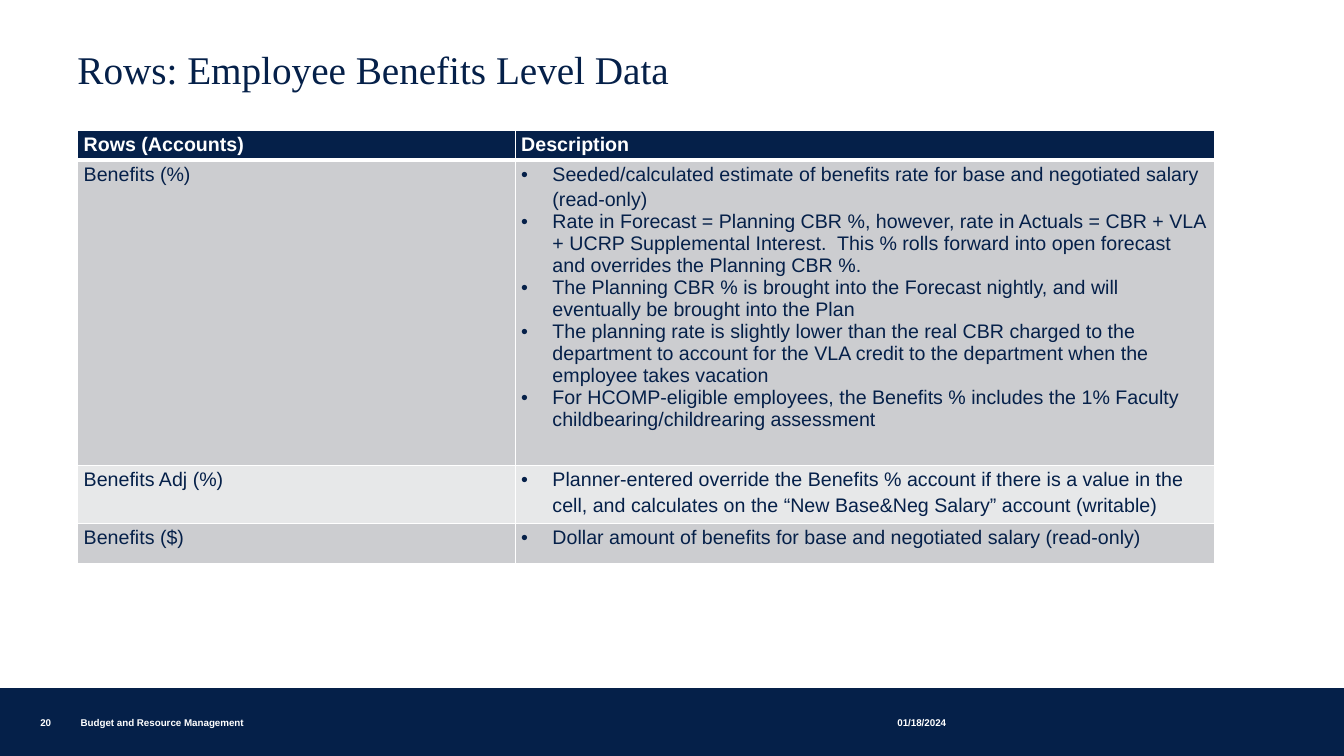
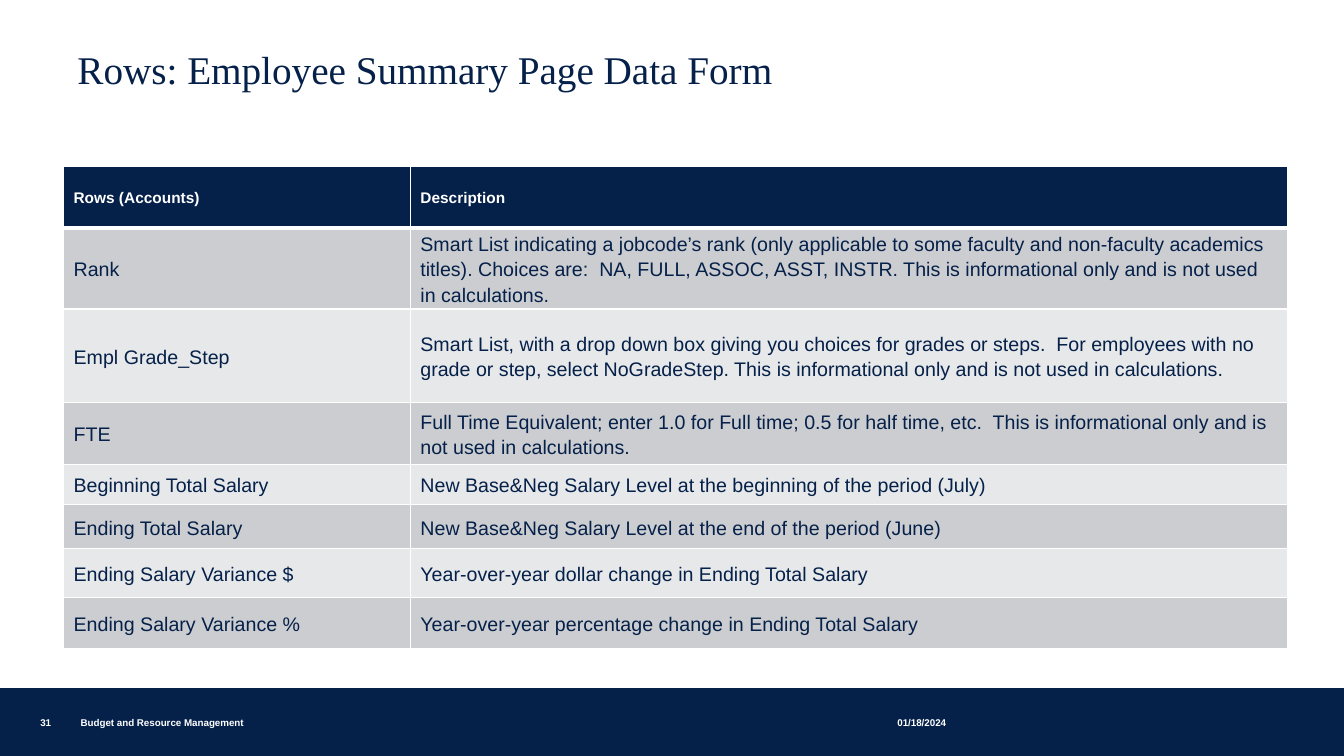
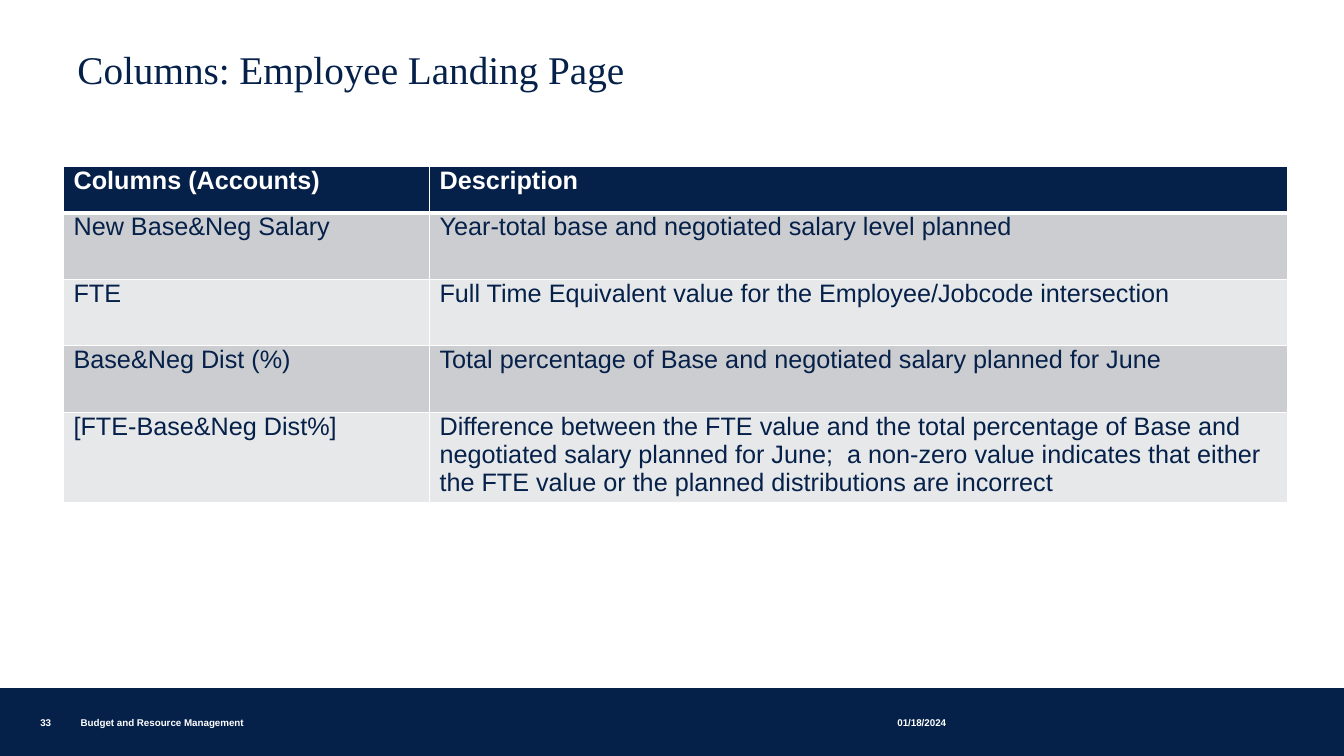
from dataclasses import dataclass

from lxml import etree
from pptx import Presentation
from pptx.dml.color import RGBColor
from pptx.enum.shapes import MSO_SHAPE
from pptx.enum.text import MSO_ANCHOR as Anchor
from pptx.oxml.ns import qn
from pptx.util import Inches, Pt

COLORS = {
    "navy": "052049",
    "white": "FFFFFF",
    "band_dark": "CCCDD0",
    "band_light": "E7E8E9",
}
BODY_FONT = "Arial"
TITLE_FONT = "Times New Roman"
DEPARTMENT = "Budget and Resource Management"
DATE = "01/18/2024"
BULLET_INDENT = Inches(0.31)


@dataclass(frozen=True)
class Row:
    height: float
    account: str
    description: str | tuple[str, ...]  # a tuple is a bulleted list


@dataclass(frozen=True)
class AccountTable:
    left: float
    top: float
    widths: tuple[float, float]
    rows: tuple[Row, ...]
    margin: float
    header_size: int
    body_size: int
    anchor: Anchor = Anchor.TOP
    spacing: float = 1.15
    description_after: int = 0


@dataclass(frozen=True)
class Page:
    number: int
    title: str
    accounts: AccountTable


@dataclass(frozen=True)
class FooterItem:
    left: float
    top: float
    width: float
    height: float
    text: str


# Content
PAGES = (
    Page(20, "Rows: Employee Benefits Level Data", AccountTable(
        left=0.77, top=1.29, widths=(4.34, 6.94), margin=0.06,
        header_size=14, body_size=14,
        rows=(
            Row(0.3, "Rows (Accounts)", "Description"),
            Row(3.03, "Benefits (%)", (
                "Seeded/calculated estimate of benefits rate for base and negotiated salary (read-only)",
                "Rate in Forecast = Planning CBR %, however, rate in Actuals = CBR + VLA + UCRP "
                "Supplemental Interest.  This % rolls forward into open forecast and overrides "
                "the Planning CBR %.",
                "The Planning CBR % is brought into the Forecast nightly, and will eventually be "
                "brought into the Plan",
                "The planning rate is slightly lower than the real CBR charged to the department "
                "to account for the VLA credit to the department when the employee takes vacation",
                "For HCOMP-eligible employees, the Benefits % includes the 1% Faculty "
                "childbearing/childrearing assessment",
            )),
            Row(0.57, "Benefits Adj (%)", (
                "Planner-entered override the Benefits % account if there is a value in the cell, "
                "and calculates on the “New Base&Neg Salary” account (writable)",
            )),
            Row(0.4, "Benefits ($)", (
                "Dollar amount of benefits for base and negotiated salary (read-only)",
            )),
        ),
    )),
    Page(31, "Rows: Employee Summary Page Data Form", AccountTable(
        left=0.63, top=1.65, widths=(3.44, 8.7), margin=0.1,
        header_size=11, body_size=14, anchor=Anchor.MIDDLE,
        rows=(
            Row(0.61, "Rows (Accounts)", "Description"),
            Row(0.77, "Rank",
                "Smart List indicating a jobcode’s rank (only applicable to some faculty and "
                "non-faculty academics titles). Choices are:  NA, FULL, ASSOC, ASST, INSTR. "
                "This is informational only and is not used in calculations."),
            Row(0.93, "Empl Grade_Step",
                "Smart List, with a drop down box giving you choices for grades or steps.  For "
                "employees with no grade or step, select NoGradeStep. This is informational only "
                "and is not used in calculations."),
            Row(0.61, "FTE",
                "Full Time Equivalent; enter 1.0 for Full time; 0.5 for half time, etc.  This is "
                "informational only and is not used in calculations."),
            Row(0.4, "Beginning Total Salary",
                "New Base&Neg Salary Level at the beginning of the period (July)"),
            Row(0.44, "Ending Total Salary",
                "New Base&Neg Salary Level at the end of the period (June)"),
            Row(0.48, "Ending Salary Variance $",
                "Year-over-year dollar change in Ending Total Salary"),
            Row(0.51, "Ending Salary Variance %",
                "Year-over-year percentage change in Ending Total Salary"),
        ),
    )),
    Page(33, "Columns: Employee Landing Page", AccountTable(
        left=0.63, top=1.65, widths=(3.63, 8.51), margin=0.1,
        header_size=18, body_size=18, spacing=1.0, description_after=10,
        rows=(
            Row(0.46, "Columns (Accounts)", "Description"),
            Row(0.66, "New Base&Neg Salary",
                "Year-total base and negotiated salary level planned"),
            Row(0.66, "FTE",
                "Full Time Equivalent value for the Employee/Jobcode intersection"),
            Row(0.66, "Base&Neg Dist (%)",
                "Total percentage of Base and negotiated salary planned for June"),
            Row(0.8, "[FTE-Base&Neg Dist%]",
                "Difference between the FTE value and the total percentage of Base and negotiated "
                "salary planned for June;  a non-zero value indicates that either the FTE value "
                "or the planned distributions are incorrect"),
        ),
    )),
)


def color(name: str) -> RGBColor:
    return RGBColor.from_string(COLORS[name])


def add_bullet(paragraph) -> None:
    properties = paragraph._p.get_or_add_pPr()
    properties.set("marL", str(BULLET_INDENT))
    properties.set("indent", str(-BULLET_INDENT))
    etree.SubElement(properties, qn("a:buFont"), typeface=BODY_FONT)
    etree.SubElement(properties, qn("a:buChar"), char="•")


def write_text(frame, text: str | tuple[str, ...], *, size: int, ink: str,
               font: str = BODY_FONT, bold: bool = False,
               spacing: float = 1.0, after: int = 0) -> None:
    """Fill a text frame; only the first paragraph takes the given line spacing."""
    bulleted = isinstance(text, tuple)
    for index, line in enumerate(text if bulleted else (text,)):
        paragraph = frame.add_paragraph() if index else frame.paragraphs[0]
        paragraph.line_spacing = 1.0 if index else spacing
        paragraph.space_after = Pt(after)
        if bulleted:
            add_bullet(paragraph)
        run = paragraph.add_run()
        run.text = line
        run.font.name = font
        run.font.size = Pt(size)
        run.font.bold = bold
        run.font.color.rgb = color(ink)


def add_text_box(slide, left: float, top: float, width: float, height: float,
                 text: str, *, margin: tuple[float, float] = (0, 0), **text_format) -> None:
    frame = slide.shapes.add_textbox(
        Inches(left), Inches(top), Inches(width), Inches(height)).text_frame
    frame.word_wrap = True
    frame.vertical_anchor = Anchor.BOTTOM
    frame.margin_left = frame.margin_right = Inches(margin[0])
    frame.margin_top = frame.margin_bottom = Inches(margin[1])
    write_text(frame, text, **text_format)


def set_borders(cell, **widths: float) -> None:
    """Draw white cell borders; the keys are the sides L, R, T and B in that order."""
    properties = cell._tc.get_or_add_tcPr()
    for position, (side, width) in enumerate(widths.items()):
        line = etree.Element(qn(f"a:ln{side}"), w=str(Pt(width)))
        fill = etree.SubElement(line, qn("a:solidFill"))
        etree.SubElement(fill, qn("a:srgbClr"), val=COLORS["white"])
        properties.insert(position, line)


def add_account_table(slide, accounts: AccountTable) -> None:
    rows = accounts.rows
    table = slide.shapes.add_table(
        len(rows), len(accounts.widths), Inches(accounts.left), Inches(accounts.top),
        Inches(sum(accounts.widths)), Inches(sum(row.height for row in rows))).table
    table.horz_banding = False
    for column, width in zip(table.columns, accounts.widths):
        column.width = Inches(width)

    for row_index, row in enumerate(rows):
        table.rows[row_index].height = Inches(row.height)
        is_header = row_index == 0
        band = "navy" if is_header else ("band_light", "band_dark")[row_index % 2]
        for column_index, text in enumerate((row.account, row.description)):
            cell = table.cell(row_index, column_index)
            cell.margin_left = cell.margin_right = Inches(accounts.margin)
            cell.margin_top = cell.margin_bottom = 0
            cell.vertical_anchor = accounts.anchor
            cell.fill.solid()
            cell.fill.fore_color.rgb = color(band)
            set_borders(cell, L=1, R=1, T=3 if row_index == 1 else 1, B=3 if is_header else 1)
            is_description = column_index == 1 and not is_header
            write_text(
                cell.text_frame, text,
                size=accounts.header_size if is_header else accounts.body_size,
                ink="white" if is_header else "navy", bold=is_header,
                spacing=accounts.spacing,
                after=accounts.description_after if is_description else 0)


def add_footer(slide, number: int) -> None:
    band = slide.shapes.add_shape(
        MSO_SHAPE.RECTANGLE, 0, Inches(6.84), Inches(13.33), Inches(0.66))
    band.shadow.inherit = False
    band.fill.solid()
    band.fill.fore_color.rgb = color("navy")
    band.line.color.rgb = color("navy")
    band.line.width = Pt(1.5)
    for item in (
        FooterItem(0.8, 7.08, 6.29, 0.15, DEPARTMENT),
        FooterItem(0.4, 7.06, 0.36, 0.17, str(number)),
        FooterItem(8.9, 7.06, 1.35, 0.17, DATE),
    ):
        add_text_box(slide, item.left, item.top, item.width, item.height, item.text,
                     size=7, ink="white", bold=True)


def add_page(deck, page: Page) -> None:
    slide = deck.slides.add_slide(deck.slide_layouts[6])
    add_footer(slide, page.number)
    add_text_box(slide, 0.67, 0.47, 11.8, 0.5, page.title, margin=(0.1, 0.05),
                 size=28, ink="navy", font=TITLE_FONT, spacing=0.85)
    add_account_table(slide, page.accounts)


def main() -> None:
    deck = Presentation()
    deck.slide_width = Inches(13.33)
    deck.slide_height = Inches(7.5)
    for page in PAGES:
        add_page(deck, page)
    deck.save("out.pptx")


if __name__ == "__main__":
    main()
